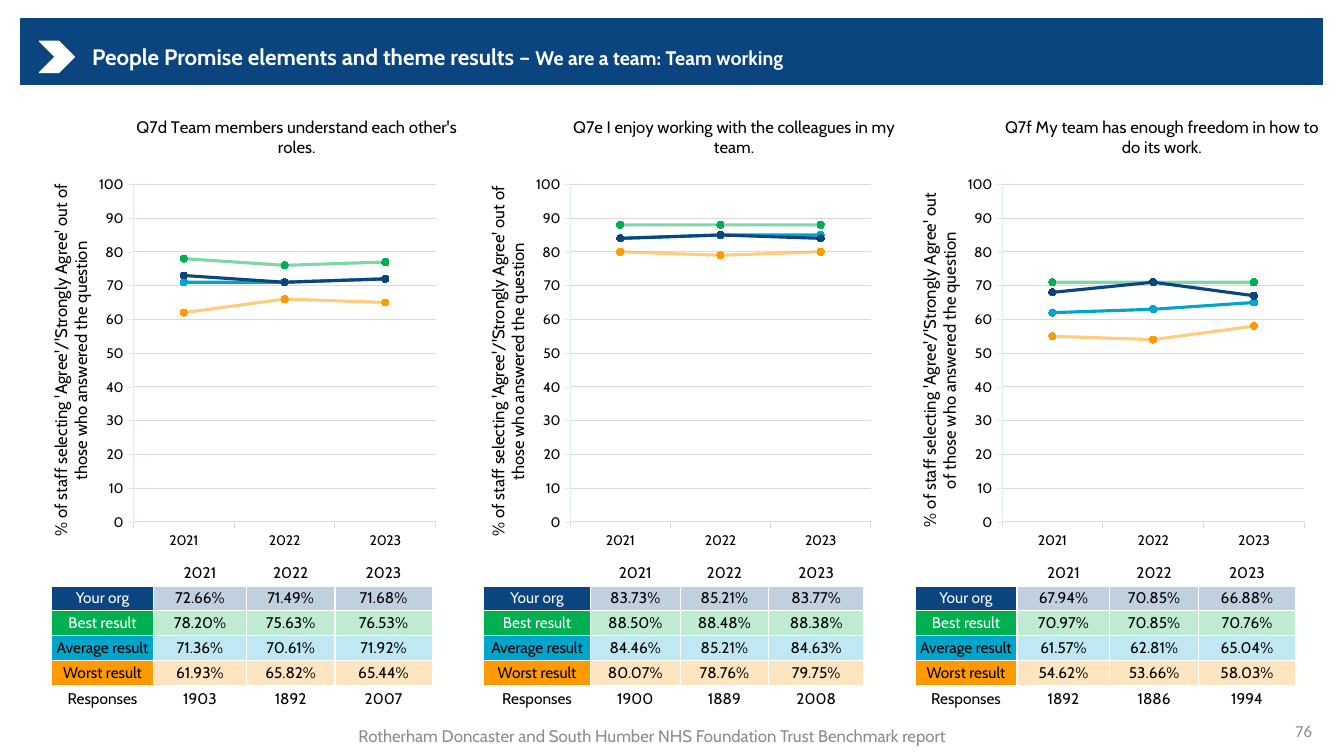
from lxml.etree import SubElement
from pptx import Presentation
from pptx.chart.data import CategoryChartData
from pptx.dml.color import RGBColor
from pptx.enum.chart import XL_CHART_TYPE, XL_MARKER_STYLE, XL_TICK_MARK
from pptx.enum.shapes import MSO_SHAPE
from pptx.enum.text import MSO_ANCHOR, PP_ALIGN
from pptx.oxml import parse_xml
from pptx.oxml.ns import nsdecls, qn
from pptx.util import Cm, Pt

NAVY, GREEN, CYAN, ORANGE = "0B457F", "00B050", "00A5CC", "FF9900"
WHITE, BLACK, GREY, GRID = "FFFFFF", "000000", "8C8C8C", "D9D9D9"
FONT = "Cabin"
YEARS = ["2021", "2022", "2023"]
# Axis title lines, broken after "out of" or after "out"
AXIS_LONG = ("% of staff selecting 'Agree'/'Strongly Agree' out of\n"
             "those who answered the question")
AXIS_SHORT = AXIS_LONG.replace(" of\n", "\nof ")

# Row label, fill, label colour
RESULT_ROWS = [
    ("Your org", NAVY, WHITE),
    ("Best result", GREEN, WHITE),
    ("Average result", CYAN, BLACK),
    ("Worst result", ORANGE, BLACK),
]
# Series in drawing order: index in RESULT_ROWS, colour, line opacity
SERIES = [(2, CYAN, 100), (1, GREEN, 50), (3, "FF9A02", 50), (0, NAVY, 100)]

OUTER_COLUMNS = (2.57, 2.34, 2.23, 2.45)
MIDDLE_COLUMNS = (2.69, 2.26, 2.23, 2.4)
# Question, chart left, table left, column widths, axis title and its top, results, responses
QUESTIONS = [
    ("Q7d Team members understand each other's roles.",
     1.17, 1.3, OUTER_COLUMNS, (AXIS_LONG, 0.19),
     [(72.66, 71.49, 71.68), (78.20, 75.63, 76.53),
      (71.36, 70.61, 71.92), (61.93, 65.82, 65.44)], (1903, 1892, 2007)),
    ("Q7e I enjoy working with the colleagues in my team.",
     12.19, 12.19, MIDDLE_COLUMNS, (AXIS_LONG, 0.19),
     [(83.73, 85.21, 83.77), (88.50, 88.48, 88.38),
      (84.46, 85.21, 84.63), (80.07, 78.76, 79.75)], (1900, 1889, 2008)),
    ("Q7f My team has enough freedom in how to do its work.",
     23.06, 23.06, OUTER_COLUMNS, (AXIS_SHORT, 0.21),
     [(67.94, 70.85, 66.88), (70.97, 70.85, 70.76),
      (61.57, 62.81, 65.04), (54.62, 53.66, 58.03)], (1892, 1886, 1994)),
]


def color(value):
    return RGBColor.from_string(value)


def style_font(font, size, value=BLACK, name=FONT, bold=False):
    for key, setting in {"size": Pt(size), "name": name, "bold": bold}.items():
        setattr(font, key, setting)
    font.color.rgb = color(value)


def set_alpha(fill, percent):
    for srgb in fill._xPr.iter(qn("a:srgbClr")):
        SubElement(srgb, qn("a:alpha"), val=str(percent * 1000))


def add_block(slide, preset, box, fill):
    block = slide.shapes.add_shape(preset, *map(Cm, box))
    block.shadow.inherit = False
    block.fill.solid()
    block.fill.fore_color.rgb = color(fill)
    block.line.color.rgb = color(fill)
    block.line.width = Pt(0.75)


def add_label(slide, box, runs, align=PP_ALIGN.LEFT, spacing=1.0):
    """Each run is a text and its font settings."""
    frame = slide.shapes.add_textbox(*map(Cm, box)).text_frame
    frame.word_wrap = True
    frame.vertical_anchor = MSO_ANCHOR.MIDDLE
    paragraph = frame.paragraphs[0]
    paragraph.alignment = align
    paragraph.line_spacing = spacing
    for text, settings in runs:
        run = paragraph.add_run()
        run.text = text
        style_font(run.font, **settings)


def add_border(cell, bottom_width):
    widths = {"lnL": 1, "lnR": 1, "lnT": 1, "lnB": bottom_width}
    for position, (side, width) in enumerate(widths.items()):
        cell._tc.get_or_add_tcPr().insert(position, parse_xml(
            f'<a:{side} {nsdecls("a")} w="{Pt(width)}"><a:solidFill>'
            f'<a:srgbClr val="{WHITE}"/></a:solidFill></a:{side}>'))


def fill_cell(cell, text, fill=None, alpha=100, text_color=BLACK, bottom_width=1):
    settings = {"margin_left": 0, "margin_right": 0, "margin_top": 0,
                "margin_bottom": 0, "vertical_anchor": MSO_ANCHOR.MIDDLE}
    for key, setting in settings.items():
        setattr(cell, key, setting)
    paragraph = cell.text_frame.paragraphs[0]
    paragraph.alignment = PP_ALIGN.CENTER
    if text:
        run = paragraph.add_run()
        run.text = text
        style_font(run.font, 11, text_color)
    else:
        SubElement(paragraph._p, qn("a:endParaRPr"), sz="1100")
    if fill:
        cell.fill.solid()
        cell.fill.fore_color.rgb = color(fill)
        if alpha < 100:
            set_alpha(cell.fill, alpha)
    else:
        cell.fill.background()
    add_border(cell, bottom_width)


def add_results_table(slide, left, columns, results, responses):
    table = slide.shapes.add_table(
        6, 4, Cm(left), Cm(14.11), Cm(sum(columns)), Cm(3.81)).table
    table.first_row = table.horz_banding = False
    for column, width in zip(table.columns, columns):
        column.width = Cm(width)
    for index, year in enumerate(["", *YEARS]):
        fill_cell(table.cell(0, index), year, bottom_width=3)
    for row, ((label, fill, label_color), values) in enumerate(zip(RESULT_ROWS, results), 1):
        fill_cell(table.cell(row, 0), label, fill, text_color=label_color)
        for index, value in enumerate(values, 1):
            fill_cell(table.cell(row, index), f"{value:.2f}%", fill, alpha=25)
    for index, text in enumerate(["Responses", *map(str, responses)]):
        fill_cell(table.cell(5, index), text)


def layout_xml(x, y, size=None):
    """Manual layout in fractions of the chart; size marks the inner plot."""
    target = '<c:layoutTarget val="inner"/>' if size else ""
    parts = {"x": x, "y": y}
    if size:
        parts.update(w=size[0], h=size[1])
    modes = '<c:xMode val="edge"/><c:yMode val="edge"/>'
    values = "".join(f'<c:{key} val="{value}"/>' for key, value in parts.items())
    return parse_xml(f'<c:layout {nsdecls("c")}><c:manualLayout>{target}{modes}'
                     f'{values}</c:manualLayout></c:layout>')


def place(element, layout, after=None):
    for old in element.findall(qn("c:layout")):
        element.remove(old)
    if after is None:
        element.insert(0, layout)
    else:
        element.find(qn(after)).addnext(layout)


def set_title(title, text, x, y):
    title.text_frame.text = text
    for paragraph in title.text_frame.paragraphs:
        style_font(paragraph.runs[0].font, 12)
    place(title._element, layout_xml(x, y), "c:tx")


def style_axis(axis, line_color, width):
    axis.major_tick_mark = XL_TICK_MARK.OUTSIDE
    axis.format.line.color.rgb = color(line_color)
    axis.format.line.width = Pt(width)
    style_font(axis.tick_labels.font, 10)


def add_trend_chart(slide, left, question, results, axis_title):
    data = CategoryChartData()
    data.categories = YEARS
    for row, _, _ in SERIES:
        data.add_series(RESULT_ROWS[row][0], [round(value) for value in results[row]])
    chart = slide.shapes.add_chart(XL_CHART_TYPE.LINE_MARKERS, Cm(left), Cm(2.52),
                                   Cm(10.44), Cm(11.3), data).chart
    chart.has_legend = False
    style_font(chart.font, 10)
    chart.has_title = True
    set_title(chart.chart_title, question, 0.21, 0.03)
    place(chart._chartSpace.chart.plotArea, layout_xml(0.21, 0.19, (0.73, 0.76)))

    # Axes
    style_axis(chart.category_axis, GRID, 0.75)
    scale = chart.value_axis
    style_axis(scale, "DBEFF9", 0.25)
    for key, setting in {"minimum_scale": 0, "maximum_scale": 100, "major_unit": 10,
                         "has_major_gridlines": True, "has_title": True}.items():
        setattr(scale, key, setting)
    scale.tick_labels.number_format = "0"
    scale.tick_labels.number_format_is_linked = False
    scale.major_gridlines.format.line.color.rgb = color(GRID)
    scale.major_gridlines.format.line.width = Pt(0.75)
    text, top = axis_title
    set_title(scale.axis_title, text, 0, top)
    body = scale.axis_title.text_frame._txBody.bodyPr
    body.set("rot", "-5400000")
    body.set("vert", "horz")

    # Series
    chart.plots[0].vary_by_categories = False
    for series, (_, tint, alpha) in zip(chart.plots[0].series, SERIES):
        series.smooth = False
        series.format.line.color.rgb = color(tint)
        series.format.line.width = Pt(2.25)
        if alpha < 100:
            set_alpha(series.format.line.fill, alpha)
        marker = series.marker
        marker.style = XL_MARKER_STYLE.CIRCLE
        marker.size = 5
        marker.format.fill.solid()
        marker.format.fill.fore_color.rgb = color(tint)
        marker.format.line.color.rgb = color(tint)


def main():
    deck = Presentation()
    deck.slide_width, deck.slide_height = Cm(33.87), Cm(19.05)
    slide = deck.slides.add_slide(deck.slide_layouts[6])

    # Header
    add_block(slide, MSO_SHAPE.RECTANGLE, (0.53, 0.48, 32.8, 1.65), NAVY)
    add_block(slide, MSO_SHAPE.CHEVRON, (0.99, 1.04, 0.89, 0.79), WHITE)
    white_bold = {"value": WHITE, "bold": True}
    add_label(slide, (2.07, 0.9, 24.41, 1.12), [
        ("People Promise elements and theme results – ", {"size": 16, **white_bold}),
        ("We are a team: Team working", {"size": 14, **white_bold}),
    ], spacing=0.9)

    # One chart and table per question
    for question, chart_left, table_left, columns, axis_title, results, responses in QUESTIONS:
        add_results_table(slide, table_left, columns, results, responses)
        add_trend_chart(slide, chart_left, question, results, axis_title)

    # Footer
    add_label(slide, (25.7, 17.91, 7.62, 1.02),
              [("76", {"size": 12, "value": GREY, "name": "Calibri"})], PP_ALIGN.RIGHT)
    add_label(slide, (7.49, 18.04, 17.91, 0.99),
              [("Rotherham Doncaster and South Humber NHS Foundation Trust Benchmark report",
                {"size": 12, "value": GREY})], PP_ALIGN.CENTER)
    deck.save("out.pptx")


if __name__ == "__main__":
    main()
